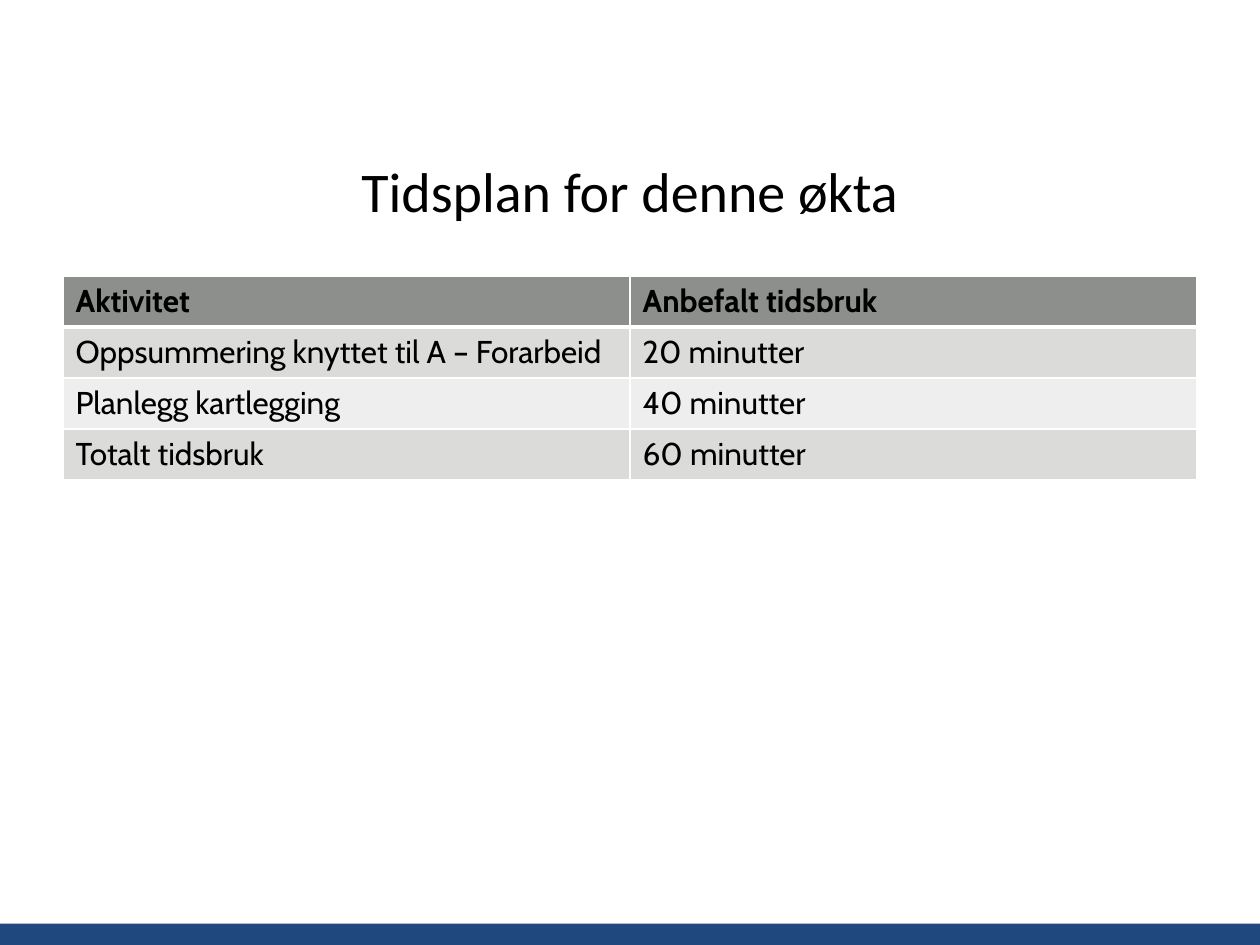
import lxml.etree
import pptx
import pptx.dml.color
import pptx.enum.shapes
import pptx.enum.text
import pptx.oxml.ns
import pptx.util

Cm = pptx.util.Cm
Pt = pptx.util.Pt
RGBColor = pptx.dml.color.RGBColor
PP_ALIGN = pptx.enum.text.PP_ALIGN
MSO_ANCHOR = pptx.enum.text.MSO_ANCHOR

BLACK = RGBColor(0x00, 0x00, 0x00)
WHITE = RGBColor(0xFF, 0xFF, 0xFF)
NAVY = RGBColor(0x1F, 0x48, 0x7E)
HEADER_GRAY = RGBColor(0x8D, 0x8F, 0x8C)
BAND_GRAYS = (RGBColor(0xDB, 0xDB, 0xDA), RGBColor(0xEE, 0xEE, 0xEE))

SLIDE_WIDTH = Cm(25.4)
SLIDE_HEIGHT = Cm(19.05)

SCHEDULE = [
    ("Aktivitet", "Anbefalt tidsbruk"),
    ("Oppsummering knyttet til A – Forarbeid", "20 minutter"),
    ("Planlegg kartlegging", "40 minutter"),
    ("Totalt tidsbruk", "60 minutter"),
]


def write_text(text_frame, text, *, font, size, bold=False, align=PP_ALIGN.LEFT):
    paragraph = text_frame.paragraphs[0]
    paragraph.alignment = align
    run = paragraph.add_run()
    run.text = text
    run.font.name = font
    run.font.size = Pt(size)
    run.font.bold = bold
    run.font.color.rgb = BLACK


def set_borders(cell, **widths):
    """Draw white cell borders; the keywords are edge tags, the values points."""
    properties = cell._tc.get_or_add_tcPr()
    for index, (edge, width) in enumerate(widths.items()):
        line = lxml.etree.Element(pptx.oxml.ns.qn(f"a:{edge}"), w=str(Pt(width)))
        fill = lxml.etree.SubElement(line, pptx.oxml.ns.qn("a:solidFill"))
        lxml.etree.SubElement(fill, pptx.oxml.ns.qn("a:srgbClr"), val=str(WHITE))
        properties.insert(index, line)


class SlideBuilder:
    title_font = "Calibri"
    table_font = "Cabin"

    def __init__(self, presentation):
        self.slide = presentation.slides.add_slide(presentation.slide_layouts[6])
        self.slide.background.fill.solid()
        self.slide.background.fill.fore_color.rgb = WHITE

    def bar(self, left, top, width, height, color):
        shape = self.slide.shapes.add_shape(
            pptx.enum.shapes.MSO_SHAPE.RECTANGLE, left, top, width, height)
        shape.shadow.inherit = False
        shape.fill.solid()
        shape.fill.fore_color.rgb = color
        shape.line.fill.background()

    def title(self, text, left, top, width, height):
        text_frame = self.slide.shapes.add_textbox(left, top, width, height).text_frame
        text_frame.word_wrap = True
        text_frame.vertical_anchor = MSO_ANCHOR.MIDDLE
        write_text(text_frame, text, font=self.title_font, size=32,
                   align=PP_ALIGN.CENTER)

    def table(self, rows, left, top, width, row_height):
        table = self.slide.shapes.add_table(
            len(rows), len(rows[0]), left, top, width, row_height * len(rows)).table
        for row_index, row in enumerate(rows):
            is_header = row_index == 0
            color = HEADER_GRAY if is_header else BAND_GRAYS[(row_index - 1) % 2]
            for column_index, text in enumerate(row):
                cell = table.cell(row_index, column_index)
                cell.fill.solid()
                cell.fill.fore_color.rgb = color
                write_text(cell.text_frame, text, font=self.table_font, size=18,
                           bold=is_header)
                set_borders(cell, lnL=1, lnR=1, lnT=3 if row_index == 1 else 1,
                            lnB=3 if is_header else 1)


def main():
    presentation = pptx.Presentation()
    presentation.slide_width = SLIDE_WIDTH
    presentation.slide_height = SLIDE_HEIGHT

    margin = Cm(1.27)
    content_width = SLIDE_WIDTH - 2 * margin
    bar_height = Cm(0.43)

    builder = SlideBuilder(presentation)
    builder.bar(0, SLIDE_HEIGHT - bar_height, SLIDE_WIDTH, bar_height, NAVY)
    builder.title("Tidsplan for denne økta", margin, Cm(2.54), content_width, Cm(2.57))
    builder.table(SCHEDULE, margin, Cm(5.56), content_width, Cm(1.03))

    presentation.save("out.pptx")


if __name__ == "__main__":
    main()
